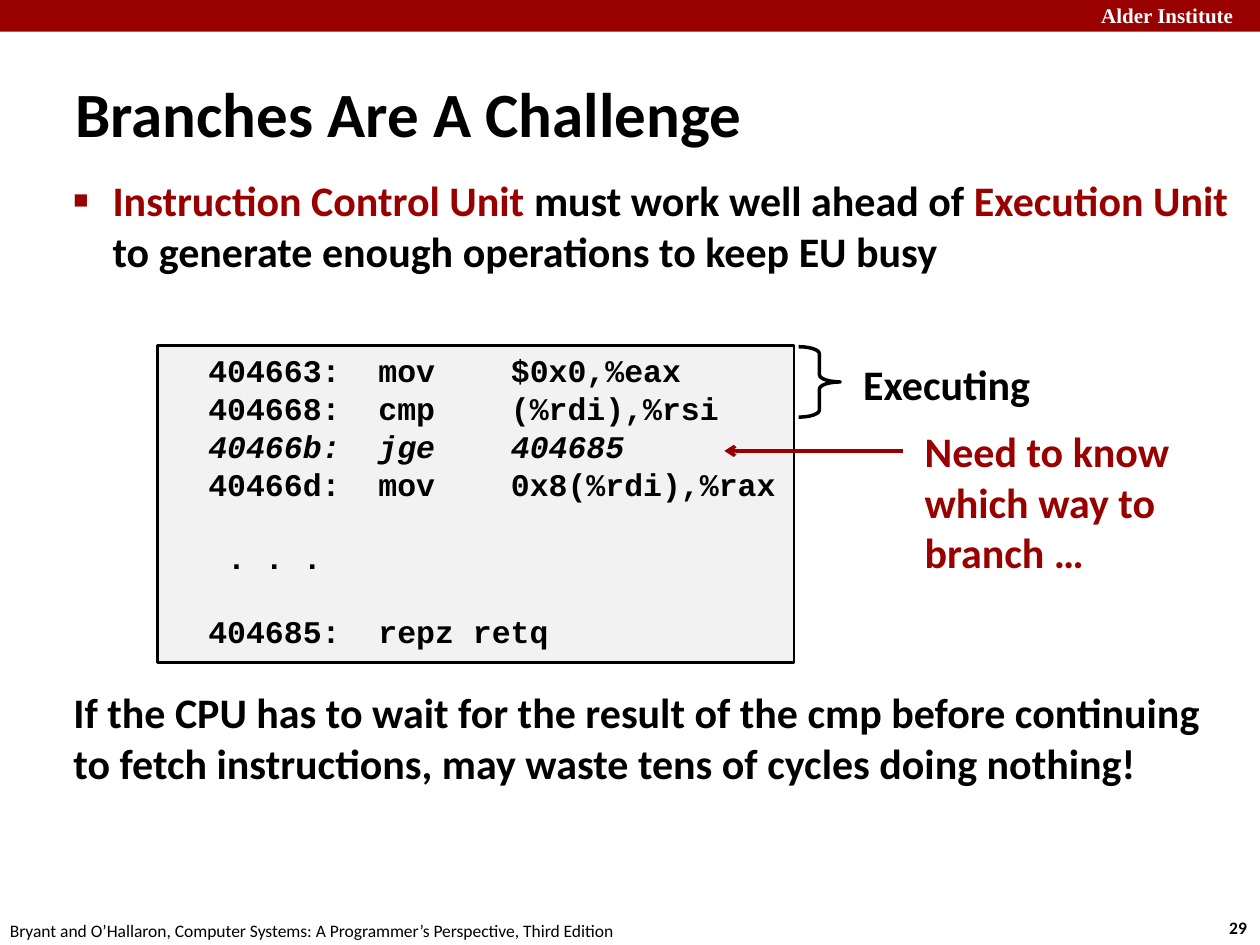
"""Build the slide on why branches are a challenge for instruction fetching."""
from lxml import etree
from pptx import Presentation
from pptx.dml.color import RGBColor
from pptx.enum.shapes import MSO_CONNECTOR, MSO_SHAPE
from pptx.enum.text import MSO_ANCHOR, PP_ALIGN
from pptx.oxml.ns import qn
from pptx.util import Cm, Pt

RECTANGLE = MSO_SHAPE.RECTANGLE
RIGHT_BRACE = MSO_SHAPE.RIGHT_BRACE
STRAIGHT = MSO_CONNECTOR.STRAIGHT
LEFT = PP_ALIGN.LEFT
TOP, MIDDLE = MSO_ANCHOR.TOP, MSO_ANCHOR.MIDDLE
COLOURS = {"red": "990000", "black": "000000", "white": "FFFFFF", "grey": "F2F2F2"}


def add_span(para, text, size, colour="black", font="Calibri", bold=True, italic=False):
    span = para.add_run()
    span.text = text
    span.font.name = font
    span.font.size = Pt(size)
    span.font.bold = bold
    span.font.italic = italic
    span.font.color.rgb = RGBColor.from_string(COLOURS[colour])


def add_box(left, top, width, height, anchor=TOP):
    box = page.shapes.add_textbox(Cm(left), Cm(top), Cm(width), Cm(height))
    box.text_frame.word_wrap = True
    box.text_frame.vertical_anchor = anchor
    return box.text_frame.paragraphs[0]


deck = Presentation()
deck.slide_width, deck.slide_height = Cm(25.4), Cm(19.05)
page = deck.slides.add_slide(deck.slide_layouts[6])

band = page.shapes.add_shape(RECTANGLE, 0, 0, deck.slide_width, Cm(0.64))
band.shadow.inherit = False
band.fill.solid()
band.fill.fore_color.rgb = RGBColor.from_string(COLOURS["red"])
band.line.fill.background()

add_span(add_box(21.95, -0.08, 3.63, 0.77), "Alder Institute", 12, "white", "Times New Roman")
add_span(add_box(24.53, 18.36, 0.95, 0.68), "29", 10)
add_span(
    add_box(-0.05, 18.42, 13.5, 0.68),
    "Bryant and O’Hallaron, Computer Systems: A Programmer’s Perspective, Third Edition",
    10,
    bold=False,
)
add_span(add_box(1.27, 1.47, 17.83, 1.6, MIDDLE), "Branches Are A Challenge", 36)

point = add_box(1.23, 3.4, 23.95, 2.4)
properties = point._p.get_or_add_pPr()
properties.set("marL", str(Cm(0.79)))
properties.set("indent", str(-Cm(0.79)))
bullet_colour = etree.SubElement(properties, qn("a:buClr"))
etree.SubElement(bullet_colour, qn("a:srgbClr"), val=COLOURS["red"])
etree.SubElement(properties, qn("a:buSzPct"), val="60000")
etree.SubElement(properties, qn("a:buFont"), typeface="Arial")
etree.SubElement(properties, qn("a:buChar"), char="■")
add_span(point, "Instruction Control Unit ", 24, "red")
add_span(point, "must work well ahead of ", 24)
add_span(point, "Execution Unit", 24, "red")
point.add_line_break()
add_span(point, "to generate enough operations to keep EU busy", 24)

add_span(
    add_box(1.23, 13.72, 23.95, 2.4),
    "If the CPU has to wait for the result of the cmp before continuing "
    "to fetch instructions, may waste tens of cycles doing nothing!",
    24,
)

listing = page.shapes.add_shape(RECTANGLE, Cm(3.18), Cm(6.96), Cm(12.83), Cm(6.4))
listing.shadow.inherit = False
listing.fill.solid()
listing.fill.fore_color.rgb = RGBColor.from_string(COLOURS["grey"])
listing.line.color.rgb = RGBColor.from_string(COLOURS["black"])
listing.line.width = Pt(1.5)
frame = listing.text_frame
frame.word_wrap = True
frame.vertical_anchor = TOP
frame.margin_left, frame.margin_right = Cm(1.02), Cm(0)

CODE = [
    ("404663:\tmov\t$0x0,%eax", False, 0),
    ("404668:\tcmp\t(%rdi),%rsi", False, 0),
    ("40466b:\tjge\t404685", True, 0),
    ("40466d:\tmov\t0x8(%rdi),%rax", False, 0),
    (" . . .", False, 20.4),
    ("404685:\trepz retq", False, 20.4),
]
for number, (text, italic, gap) in enumerate(CODE):
    para = frame.add_paragraph() if number else frame.paragraphs[0]
    para.alignment = LEFT
    para.space_before = Pt(gap)
    tabs = etree.SubElement(para._p.get_or_add_pPr(), qn("a:tabLst"))
    for stop in (3.43, 6.1):
        etree.SubElement(tabs, qn("a:tab"), pos=str(Cm(stop)), algn="l")
    add_span(para, text, 18, font="Courier New", italic=italic)

brace = page.shapes.add_shape(RIGHT_BRACE, Cm(16.1), Cm(6.99), Cm(0.84), Cm(1.42))
brace.shadow.inherit = False
brace.adjustments[0] = 0.17
brace.fill.background()
brace.line.color.rgb = RGBColor.from_string(COLOURS["black"])
brace.line.width = Pt(2)
add_span(add_box(17.15, 7.11, 4.2, 1.27), "Executing", 24)

question = add_box(18.39, 8.46, 6, 3.33)
for number, text in enumerate(("Need to know", "which way to", "branch …")):
    if number:
        question.add_line_break()
    add_span(question, text, 24, "red")

arrow = page.shapes.add_connector(STRAIGHT, Cm(18.21), Cm(9.09), Cm(14.6), Cm(9.09))
arrow.line.color.rgb = RGBColor.from_string(COLOURS["red"])
arrow.line.width = Pt(2)
etree.SubElement(arrow.line._get_or_add_ln(), qn("a:tailEnd"), type="arrow")
etree.SubElement(arrow._element.spPr, qn("a:effectLst"))

deck.save("out.pptx")
